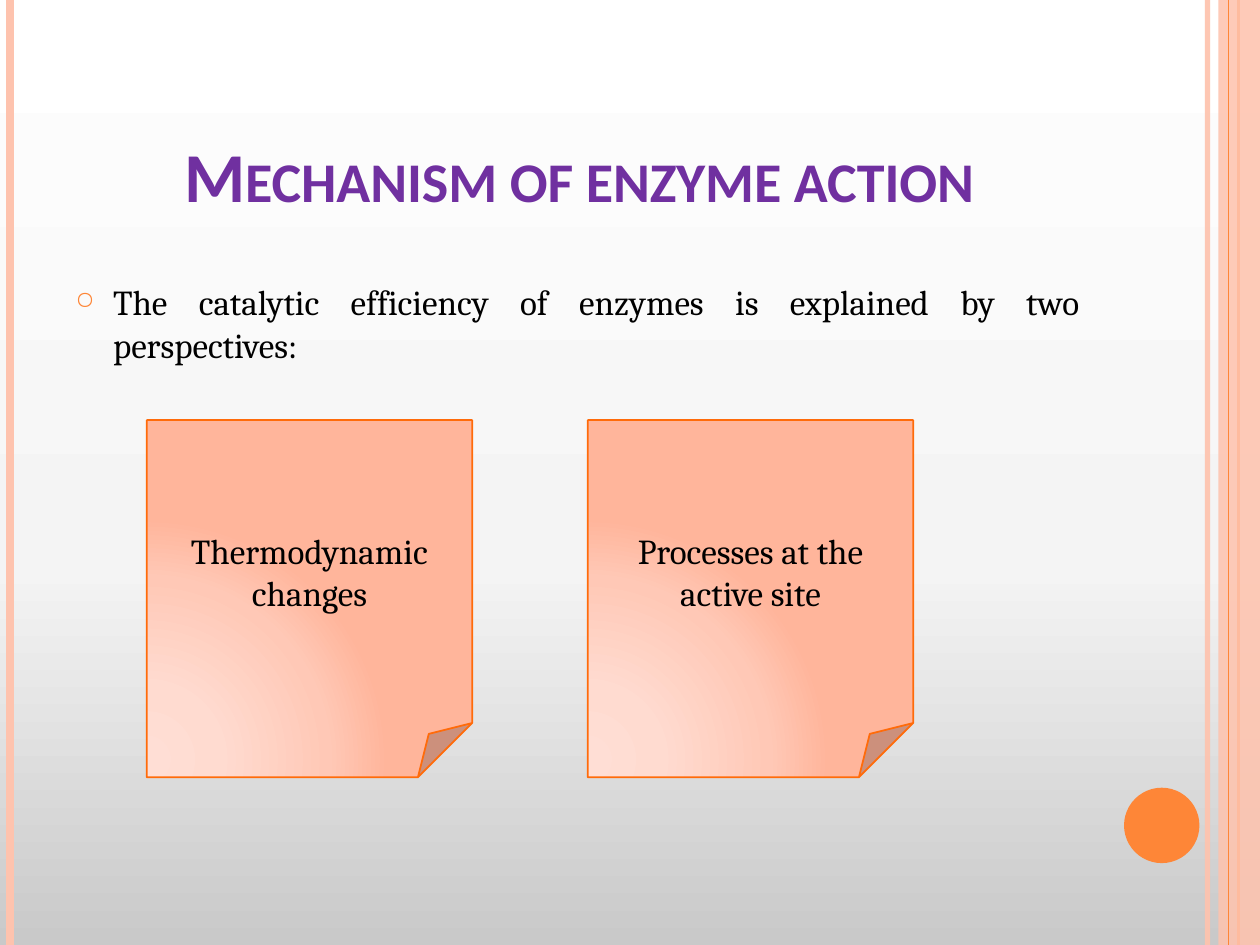
from lxml.etree import SubElement
from pptx import Presentation
from pptx.dml.color import RGBColor
from pptx.enum.shapes import MSO_CONNECTOR as CONN, MSO_SHAPE as SHAPE
from pptx.enum.text import MSO_ANCHOR as ANCHOR, MSO_AUTO_SIZE as AUTO, PP_ALIGN as ALIGN
from pptx.oxml.ns import qn
from pptx.util import Cm, Pt

WIDTH, HEIGHT = 25.4, 19.05


def rgb(color):
    return RGBColor.from_string(color)


def add(parent, tag, **attrs):
    """Append a DrawingML child element and return it."""
    return SubElement(parent, qn("a:" + tag), {k: str(v) for k, v in attrs.items()})


def set_gradient(props, stops):
    """Swap the solid fill in props for a gradient and return its element."""
    solid = props.find(qn("a:solidFill"))
    grad = add(props, "gradFill", rotWithShape=1)
    props.replace(solid, grad)
    stop_list = add(grad, "gsLst")
    for percent, color in stops:
        add(add(stop_list, "gs", pos=percent * 1000), "srgbClr", val=color)
    return grad


def set_alpha(fill_parent, percent):
    color = fill_parent.find(qn("a:solidFill")).find(qn("a:srgbClr"))
    add(color, "alpha", val=percent * 1000)


class Deck:
    """Holds the style and the current slide."""

    heading_font, body_font = "Calibri", "Cambria"
    orange, peach, outline = "FE8637", "FEC3AE", "FF6B0A"
    purple, black = "7030A0", "000000"
    backdrop = [(0, "C9C9C9"), (40, "F4F4F4"), (100, "FFFFFF")]
    paper = [(0, "FFDED5"), (30, "FFDBD0"), (75, "FFC8B6"), (100, "FFB59B")]

    def __init__(self):
        self.prs = Presentation()
        self.prs.slide_width, self.prs.slide_height = Cm(WIDTH), Cm(HEIGHT)
        self.slide = self.prs.slides.add_slide(self.prs.slide_layouts[5])

    def background(self):
        self.slide.background.fill.solid()
        props = self.slide._element.cSld.bg.bgPr
        add(set_gradient(props, self.backdrop), "lin", ang=270 * 60000, scaled=0)

    def stripe(self, x, color, weight, alpha=100):
        """Draw a full-height vertical line."""
        line = self.slide.shapes.add_connector(CONN.STRAIGHT, Cm(x), 0, Cm(x), Cm(HEIGHT))
        line.line.color.rgb = rgb(color)
        line.line.width = Pt(weight)
        if alpha < 100:
            set_alpha(line.line._ln, alpha)
        add(line._element.spPr, "effectLst")

    def shape(self, kind, x, y, w, h, color, alpha=100):
        sp = self.slide.shapes.add_shape(kind, Cm(x), Cm(y), Cm(w), Cm(h))
        sp.shadow.inherit = False
        sp.fill.solid()
        sp.fill.fore_color.rgb = rgb(color)
        sp.line.fill.background()
        if alpha < 100:
            set_alpha(sp._element.spPr, alpha)
        return sp

    def set_text(self, sp, text, font, size, color, align, anchor, bold=False):
        """Put one formatted paragraph into a shape and return it."""
        tf = sp.text_frame
        tf.text = text
        tf.word_wrap = True
        tf.auto_size = AUTO.NONE
        tf.vertical_anchor = anchor
        p = tf.paragraphs[0]
        p.alignment = align
        f = p.runs[0].font
        f.name, f.size, f.bold = font, Pt(size), bold
        f.color.rgb = rgb(color)
        return p

    def title(self, text, x, y, w, h):
        sp = self.slide.shapes.title
        sp.left, sp.top, sp.width, sp.height = Cm(x), Cm(y), Cm(w), Cm(h)
        p = self.set_text(sp, text, self.heading_font, 40, self.purple,
                          ALIGN.CENTER, ANCHOR.BOTTOM, bold=True)
        p.runs[0]._r.get_or_add_rPr().set("cap", "small")

    def bullet(self, text, x, y, w, h):
        sp = self.slide.shapes.add_textbox(Cm(x), Cm(y), Cm(w), Cm(h))
        p = self.set_text(sp, text, self.body_font, 20, self.black, ALIGN.JUSTIFY, ANCHOR.TOP)
        p.space_before = Pt(6)
        props = p._p.get_or_add_pPr()
        indent = Cm(0.76)
        props.set("marL", str(indent))
        props.set("indent", str(-indent))
        add(add(props, "buClr"), "srgbClr", val=self.orange)
        add(props, "buSzPct", val=70000)
        add(props, "buChar", char="○")

    def note(self, text, x, y, w, h):
        sp = self.shape(SHAPE.FOLDED_CORNER, x, y, w, h, self.peach)
        center = add(set_gradient(sp._element.spPr, self.paper), "path", path="circle")
        add(center, "fillToRect", l=5000, t=100000, r=120000, b=10000)
        sp.line.color.rgb = rgb(self.outline)
        sp.line.width = Pt(1)
        self.set_text(sp, text, self.body_font, 20, self.black, ALIGN.CENTER, ANCHOR.MIDDLE)


def main():
    deck = Deck()
    deck.background()

    deck.stripe(24.34, deck.peach, 3, alpha=93)
    deck.stripe(0.21, deck.peach, 4.5)
    deck.stripe(24.97, deck.orange, 1.5)
    band_left = 24.56
    deck.shape(SHAPE.RECTANGLE, band_left, 0, WIDTH - band_left, HEIGHT, deck.peach, alpha=87)
    deck.stripe(24.77, deck.orange, 0.75)
    deck.shape(SHAPE.OVAL, 22.66, 15.88, 1.52, 1.52, deck.orange)

    deck.title("Mechanism of enzyme action", 1.3, 1.32, 20.75, 3.18)
    deck.bullet("The catalytic efficiency of enzymes is explained by two perspectives:",
                1.27, 5.54, 20.75, 12.45)
    for i, text in enumerate(["Thermodynamic changes", "Processes at the active site"]):
        deck.note(text, 2.96 + i * 8.89, 8.47, 6.56, 7.2)

    deck.prs.save("out.pptx")


if __name__ == "__main__":
    main()
